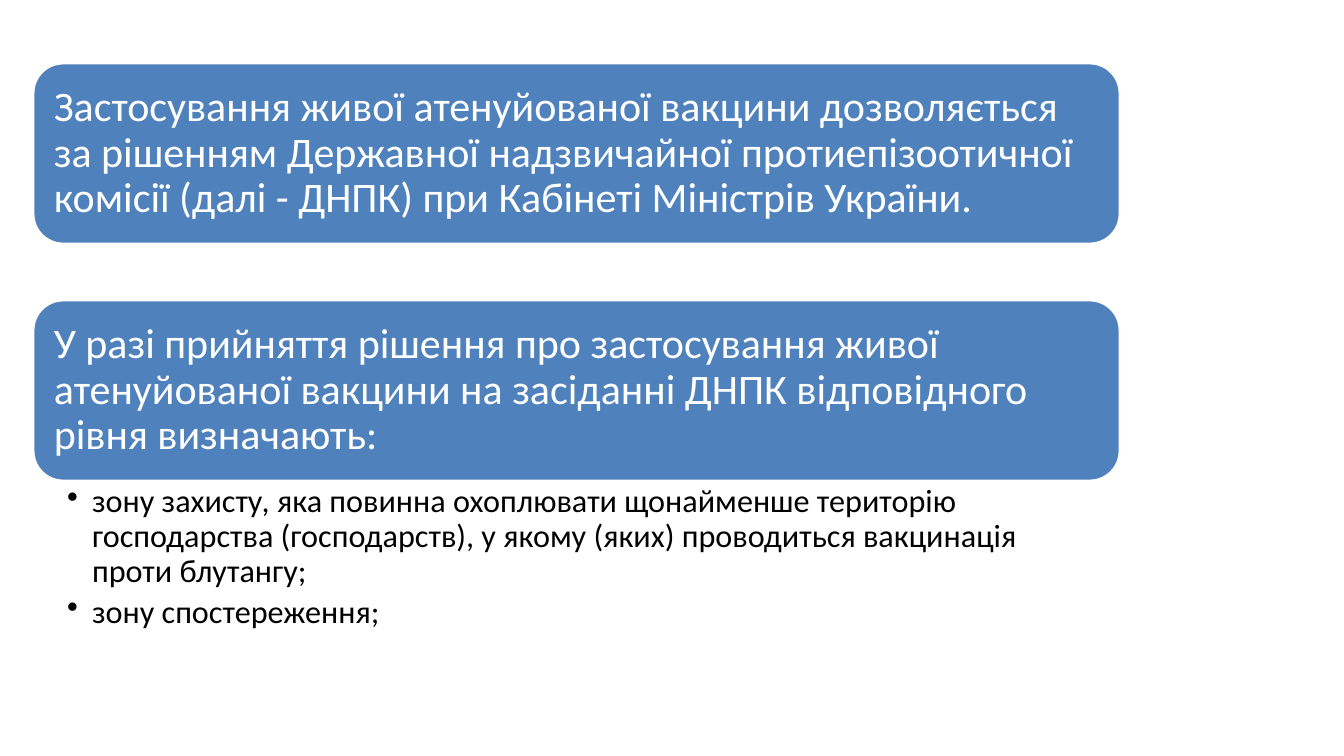
"""Build a slide with two decision cards and the list of zones to define."""
from dataclasses import dataclass

from lxml import etree
from pptx import Presentation
from pptx import util as u
from pptx.dml.color import RGBColor
from pptx.enum import shapes, text
from pptx.oxml.ns import qn

EMU_PER_PX = 914400 / 100.8


@dataclass(frozen=True)
class Theme:
    font: str = "Calibri"
    card_fill: RGBColor = RGBColor(0x4F, 0x81, 0xBD)
    light: RGBColor = RGBColor(0xFF, 0xFF, 0xFF)
    dark: RGBColor = RGBColor(0, 0, 0)
    card_size: float = 30
    zone_size: float = 23
    zone_gap: float = 4.6
    outline: float = 2
    line_spacing: float = 0.9


@dataclass(frozen=True)
class Box:
    left: int
    top: int
    width: int
    height: int


THEME = Theme()
LEFT, FIRST_TOP, WIDTH = 33, 63, 1087
CARD_HEIGHT, CARD_PITCH, ZONES_HEIGHT = 181, 237, 161
CARD_INSET, ZONE_INDENT = 12, 25

DECISIONS = (
    "Застосування живої атенуйованої вакцини дозволяється за рішенням Державної "
    "надзвичайної протиепізоотичної комісії (далі - ДНПК) при Кабінеті Міністрів України.",
    "У разі прийняття рішення про застосування живої атенуйованої вакцини на засіданні "
    "ДНПК відповідного рівня визначають:",
)
ZONES = (
    "зону захисту, яка повинна охоплювати щонайменше територію господарства "
    "(господарств), у якому (яких) проводиться вакцинація проти блутангу;",
    "зону спостереження;",
)


def px(length: int) -> u.Emu:
    return u.Emu(round(length * EMU_PER_PX))


def place(box: Box) -> tuple:
    return px(box.left), px(box.top), px(box.width), px(box.height)


def set_frame(frame, insets: tuple, anchor) -> None:
    frame.word_wrap = True
    frame.vertical_anchor = anchor
    (frame.margin_left, frame.margin_top,
     frame.margin_right, frame.margin_bottom) = map(px, insets)


def write(paragraph, wording: str, size: float, color: RGBColor) -> None:
    paragraph.text = wording
    paragraph.alignment = text.PP_ALIGN.LEFT
    paragraph.line_spacing = THEME.line_spacing
    paragraph.font.name = THEME.font
    paragraph.font.size = u.Pt(size)
    paragraph.font.color.rgb = color


def add_bullet(paragraph) -> None:
    properties = paragraph._p.get_or_add_pPr()
    properties.set("marL", str(px(ZONE_INDENT)))
    properties.set("indent", str(-px(ZONE_INDENT)))
    etree.SubElement(properties, qn("a:buChar")).set("char", "•")


def draw_decision(slide, box: Box, wording: str) -> None:
    card = slide.shapes.add_shape(shapes.MSO_SHAPE.ROUNDED_RECTANGLE, *place(box))
    card.shadow.inherit = False
    card.fill.solid()
    card.fill.fore_color.rgb = THEME.card_fill
    card.line.color.rgb = THEME.light
    card.line.width = u.Pt(THEME.outline)
    set_frame(card.text_frame, (CARD_INSET,) * 4, text.MSO_ANCHOR.MIDDLE)
    write(card.text_frame.paragraphs[0], wording, THEME.card_size, THEME.light)


def draw_zones(slide, box: Box, zones: tuple) -> None:
    frame = slide.shapes.add_textbox(*place(box)).text_frame
    set_frame(frame, (34, 4, 23, 4), text.MSO_ANCHOR.TOP)
    for index, zone in enumerate(zones):
        paragraph = frame.add_paragraph() if index else frame.paragraphs[0]
        add_bullet(paragraph)
        write(paragraph, zone, THEME.zone_size, THEME.dark)
        paragraph.level = 1
        paragraph.space_after = u.Pt(THEME.zone_gap)


def main() -> None:
    deck = Presentation()
    deck.slide_width, deck.slide_height = px(1344), px(756)
    slide = deck.slides.add_slide(deck.slide_layouts[6])
    for index, decision in enumerate(DECISIONS):
        top = FIRST_TOP + index * CARD_PITCH
        draw_decision(slide, Box(LEFT, top, WIDTH, CARD_HEIGHT), decision)
    draw_zones(slide, Box(LEFT, top + CARD_HEIGHT, WIDTH, ZONES_HEIGHT), ZONES)
    deck.save("out.pptx")


if __name__ == "__main__":
    main()
